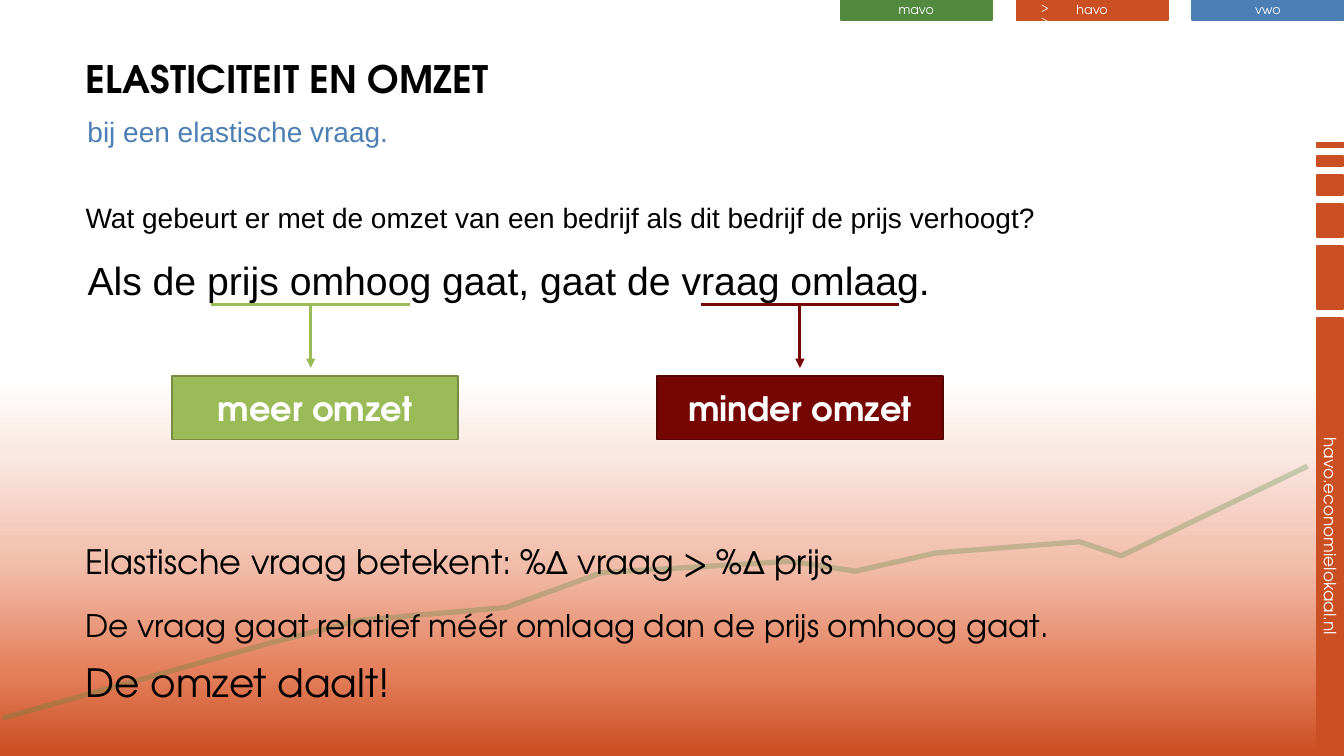
from dataclasses import dataclass

from lxml.etree import SubElement
from pptx import Presentation
from pptx.dml.color import RGBColor
from pptx.enum.shapes import MSO_CONNECTOR as Connector, MSO_SHAPE as Shape
from pptx.enum.text import MSO_ANCHOR as Anchor, PP_ALIGN as Align
from pptx.oxml.ns import qn
from pptx.util import Pt


@dataclass(frozen=True)
class Theme:
    black: str = "000000"
    white: str = "FFFFFF"
    blue: str = "4C7FB4"
    orange: str = "CA4F22"
    green: str = "52893F"
    lime: str = "9BBB59"
    lime_edge: str = "798A42"
    maroon: str = "760603"
    maroon_edge: str = "570402"
    gradient: tuple = ((0, "CA4F22"), (11, "E47E5A"), (25, "F1BCA9"),
                       (40, "FAE8E2"), (50, "FFFFFF"))
    display: str = "TeX Gyre Adventor"
    plain: str = "Arial"
    marker_size: float = 7.5
    tab_size: float = 9
    site_size: float = 12
    small: float = 20
    relative: float = 22.2
    medium: float = 24
    title: float = 27
    conclusion: float = 27.8
    sentence: float = 28


THEME = Theme()
TREND = [(933.8, 332.6), (800.6, 396.7), (771.1, 386.6), (668.2, 395.3),
         (611.3, 407.5), (565.2, 401), (429.8, 409), (360.7, 434.2),
         (257, 442.8), (194.4, 459.4), (2.2, 513.4)]


def rgb(value):
    return RGBColor.from_string(value)


def write(frame, text, *, size, font=THEME.display, color=THEME.black,
          bold=False, align=Align.LEFT, before=0, after=0, add=False):
    """Fill the first paragraph of a frame, or add one after the others."""
    para = frame.add_paragraph() if add else frame.paragraphs[0]
    para.alignment = align
    para.space_before, para.space_after = Pt(before), Pt(after)
    span = para.add_run()
    span.text = text
    span.font.name, span.font.size, span.font.bold = font, Pt(size), bold
    span.font.color.rgb = rgb(color)


def add_text(page, text, left, top, width, height, **style):
    box = page.shapes.add_textbox(Pt(left), Pt(top), Pt(width), Pt(height))
    box.text_frame.word_wrap = True
    write(box.text_frame, text, **style)
    return box.text_frame


def add_bar(page, left, top, width, height, fill, edge=None, rotation=0):
    bar = page.shapes.add_shape(Shape.RECTANGLE, Pt(left), Pt(top), Pt(width), Pt(height))
    bar.rotation = rotation
    bar.shadow.inherit = False
    bar.fill.solid()
    bar.fill.fore_color.rgb = rgb(fill)
    bar.line.color.rgb = rgb(edge or fill)
    bar.line.width = Pt(1.25)
    bar.text_frame.vertical_anchor = Anchor.MIDDLE
    return bar


def label(bar, text, size, bold=False, slim=False):
    frame = bar.text_frame
    frame.word_wrap = True
    if slim:
        frame.margin_top, frame.margin_bottom = Pt(0), Pt(0.7)
    write(frame, text, size=size, color=THEME.white, bold=bold, align=Align.CENTER)


def add_line(page, start, end, color, arrow=False):
    line = page.shapes.add_connector(Connector.STRAIGHT, *map(Pt, start + end))
    line.line.color.rgb = rgb(color)
    line.line.width = Pt(2.25)
    properties = line.element.spPr
    if arrow:
        SubElement(properties.find(qn("a:ln")), qn("a:tailEnd"), type="triangle")
    SubElement(properties, qn("a:effectLst"))


def paint_background(page):
    fill = page.background.fill
    fill.gradient()
    fill.gradient_angle = 90
    stops = next(page.element.iter(qn("a:gsLst")))
    for stop in list(stops):
        stops.remove(stop)
    for percent, color in THEME.gradient:
        stop = SubElement(stops, qn("a:gs"), pos=str(percent * 1000))
        SubElement(stop, qn("a:srgbClr"), val=color)


def add_tabs(page):
    tabs = (("mavo", THEME.green), ("havo", THEME.orange), ("vwo", THEME.blue))
    for index, (name, color) in enumerate(tabs):
        tab = add_bar(page, 600.5 + 125.6 * index, 0, 108, 14.4, color)
        label(tab, name, THEME.tab_size, slim=True)
    add_text(page, ">>", 736.6, -2.9, 23.8, 16.6,
             size=THEME.marker_size, color=THEME.white)


def add_side_strip(page):
    """Stack bars of growing length; the last one carries the web address."""
    top, center, thickness, gap = 101.7, 950, 18.7, 6.2
    for length in (3.6, 7.2, 14.4, 24, 45, 312):
        bar = add_bar(page, center - length / 2, top + (length - thickness) / 2,
                      length, thickness, THEME.orange, rotation=90)
        top += length + gap
    label(bar, "havo.economielokaal.nl", THEME.site_size, slim=True)


def add_trend(page):
    builder = page.shapes.build_freeform(*TREND[0], scale=Pt(1))
    builder.add_line_segments(TREND[1:], close=False)
    trend = builder.convert_to_shape()
    trend.shadow.inherit = False
    trend.fill.background()
    trend.line.color.rgb = rgb(THEME.green)
    trend.line.width = Pt(3.75)
    color = next(trend.element.spPr.find(qn("a:ln")).iter(qn("a:srgbClr")))
    SubElement(color, qn("a:alpha"), val="30000")


def add_effect(page, text, line_left, box_left, fill, edge):
    """Underline a phrase and point from it to its effect on revenue."""
    line_top, line_width = 217.4, 142
    middle = line_left + line_width / 2
    add_line(page, (line_left, line_top), (line_left + line_width, line_top), fill)
    add_line(page, (middle, line_top), (middle, 262.8), fill, arrow=True)
    box = add_bar(page, box_left, 268.6, 204, 45.4, fill, edge)
    label(box, text, THEME.medium, bold=True)


def main():
    deck = Presentation()
    deck.slide_width, deck.slide_height = Pt(960), Pt(540)
    page = deck.slides.add_slide(deck.slide_layouts[6])
    paint_background(page)
    add_tabs(page)
    add_side_strip(page)
    add_trend(page)

    add_text(page, "ELASTICITEIT EN OMZET", 54, 36, 721, 64,
             size=THEME.title, bold=True)
    add_text(page, "bij een elastische vraag.", 55.4, 78.5, 321, 53,
             size=THEME.small, font=THEME.plain, color=THEME.blue)
    add_text(page, "Wat gebeurt er met de omzet van een bedrijf als dit bedrijf de prijs verhoogt?",
             54, 139.7, 783, 38, size=THEME.small, font=THEME.plain)
    add_text(page, "Als de prijs omhoog gaat, gaat de vraag omlaag.", 54, 179.3, 618.5, 51,
             size=THEME.sentence, font=THEME.plain, align=Align.CENTER)

    add_effect(page, "meer omzet", 151, 123, THEME.lime, THEME.lime_edge)
    add_effect(page, "minder omzet", 500.4, 469.4, THEME.maroon, THEME.maroon_edge)

    add_text(page, "Elastische vraag betekent: %Δ vraag > %Δ prijs", 54, 383, 788, 36,
             size=THEME.medium)
    answer = add_text(page, "De vraag gaat relatief méér omlaag dan de prijs omhoog gaat.",
                      54, 429.8, 806, 75, size=THEME.relative, after=4.5)
    write(answer, "De omzet daalt!", size=THEME.conclusion, before=5.6, after=4.5, add=True)

    deck.save("out.pptx")


if __name__ == "__main__":
    main()
